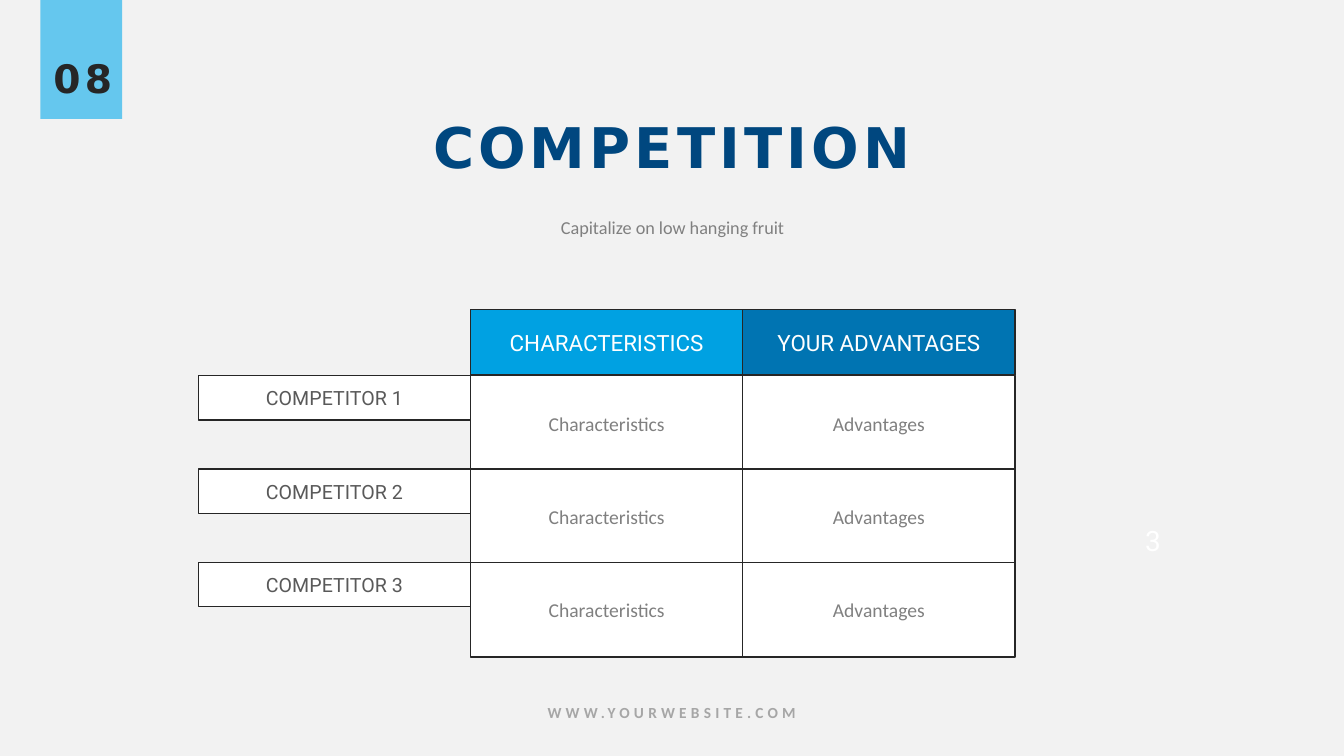
from dataclasses import dataclass

from pptx import Presentation
from pptx.dml.color import RGBColor
from pptx.enum.shapes import MSO_SHAPE
from pptx.enum.text import MSO_ANCHOR, MSO_AUTO_SIZE, PP_ALIGN
from pptx.util import Cm, Pt

RECTANGLE = MSO_SHAPE.RECTANGLE
TOP, MIDDLE = MSO_ANCHOR.TOP, MSO_ANCHOR.MIDDLE
CENTER = PP_ALIGN.CENTER
NO_AUTO_SIZE = MSO_AUTO_SIZE.NONE


@dataclass(frozen=True)
class TextStyle:
    font: str
    size: int
    color: str
    bold: bool = False
    spacing: int = 0


@dataclass(frozen=True)
class Theme:
    background: str = "F2F2F2"
    badge: str = "65C7EE"
    cell: str = "FFFFFF"
    outline: str = "262626"
    characteristics: str = "00A1E2"
    advantages: str = "0074B2"
    title: TextStyle = TextStyle("DejaVu Sans", 40, "00477F", True, 3)
    badge_number: TextStyle = TextStyle("DejaVu Sans", 28, "262626", True, 3)
    website: TextStyle = TextStyle("Calibri", 11, "A6A6A6", True, 3)
    subtitle: TextStyle = TextStyle("Calibri", 13, "808080")
    body: TextStyle = TextStyle("Calibri", 14, "808080")
    competitor: TextStyle = TextStyle("Roboto", 14, "595959")
    heading: TextStyle = TextStyle("Roboto", 16, "FFFFFF")
    page_number: TextStyle = TextStyle("Roboto", 20, "FFFFFF")


THEME = Theme()

NAME_LEFT, COLUMN_WIDTH = 5.0, 6.86
HEADER_TOP, HEADER_HEIGHT = 7.8, 1.65
ROWS_TOP, ROW_PITCH, ROW_HEIGHT = 9.47, 2.35, 2.39
NAME_HEIGHT = 1.12
COMPETITORS = ["COMPETITOR 1", "COMPETITOR 2", "COMPETITOR 3"]
COLUMNS = [
    ("CHARACTERISTICS", "Characteristics", THEME.characteristics),
    ("YOUR ADVANTAGES", "Advantages", THEME.advantages),
]


def write_text(shape, text, style, anchor=TOP):
    frame = shape.text_frame
    frame.word_wrap = True
    frame.auto_size = NO_AUTO_SIZE
    frame.vertical_anchor = anchor
    paragraph = frame.paragraphs[0]
    paragraph.alignment = CENTER
    paragraph.space_before = Pt(0)
    run = paragraph.add_run()
    run.text = text
    font = run.font
    font.name = style.font
    font.size = Pt(style.size)
    font.bold = style.bold
    font.color.rgb = RGBColor.from_string(style.color)
    if style.spacing:
        run._r.get_or_add_rPr().set("spc", str(style.spacing * 100))
    return paragraph


def add_text(slide, left, top, width, height, text, style):
    box = slide.shapes.add_textbox(Cm(left), Cm(top), Cm(width), Cm(height))
    write_text(box, text, style)


def add_box(slide, left, top, width, height, fill, outline=None):
    shape = slide.shapes.add_shape(RECTANGLE, Cm(left), Cm(top), Cm(width), Cm(height))
    shape.shadow.inherit = False
    shape.fill.solid()
    shape.fill.fore_color.rgb = RGBColor.from_string(fill)
    if outline:
        shape.line.color.rgb = RGBColor.from_string(outline)
        shape.line.width = Pt(1)
    else:
        shape.line.fill.background()
    return shape


def add_cell(slide, left, top, height, fill, text, style):
    cell = add_box(slide, left, top, COLUMN_WIDTH, height, fill, THEME.outline)
    write_text(cell, text, style, MIDDLE)


def fill_placeholder(placeholder, left, top, width, height, text, style):
    placeholder.left, placeholder.top = Cm(left), Cm(top)
    placeholder.width, placeholder.height = Cm(width), Cm(height)
    return write_text(placeholder, text, style)


def add_comparison(slide):
    """Draw the competitor names and the two columns beside them."""
    row_tops = [ROWS_TOP + row * ROW_PITCH for row in range(len(COMPETITORS))]
    for top, name in zip(row_tops, COMPETITORS):
        add_cell(slide, NAME_LEFT, top, NAME_HEIGHT, THEME.cell, name, THEME.competitor)
    for column, (heading, entry, color) in enumerate(COLUMNS, start=1):
        left = NAME_LEFT + column * COLUMN_WIDTH
        add_cell(slide, left, HEADER_TOP, HEADER_HEIGHT, color, heading, THEME.heading)
        for top in row_tops:
            add_cell(slide, left, top, ROW_HEIGHT, THEME.cell, entry, THEME.body)


def main():
    presentation = Presentation()
    presentation.slide_width, presentation.slide_height = Cm(33.87), Cm(19.05)
    slide = presentation.slides.add_slide(presentation.slide_layouts[0])
    slide.background.fill.solid()
    slide.background.fill.fore_color.rgb = RGBColor.from_string(THEME.background)

    title, subtitle = slide.placeholders
    fill_placeholder(title, 3.56, 2.72, 26.75, 1.96, "COMPETITION", THEME.title)
    paragraph = fill_placeholder(subtitle, 2.57, 5.31, 28.75, 0.81,
                                 "Capitalize on low hanging fruit", THEME.subtitle)
    paragraph.line_spacing = Pt(16)

    add_box(slide, 1.02, 0, 2.06, 3, THEME.badge)
    add_text(slide, 0.89, 1.24, 2.39, 1.45, "08", THEME.badge_number)
    add_comparison(slide)
    add_text(slide, 28.06, 13.06, 2, 1.12, "3", THEME.page_number)
    add_text(slide, 12.09, 17.6, 9.68, 0.74, "WWW.YOURWEBSITE.COM", THEME.website)
    presentation.save("out.pptx")


if __name__ == "__main__":
    main()
